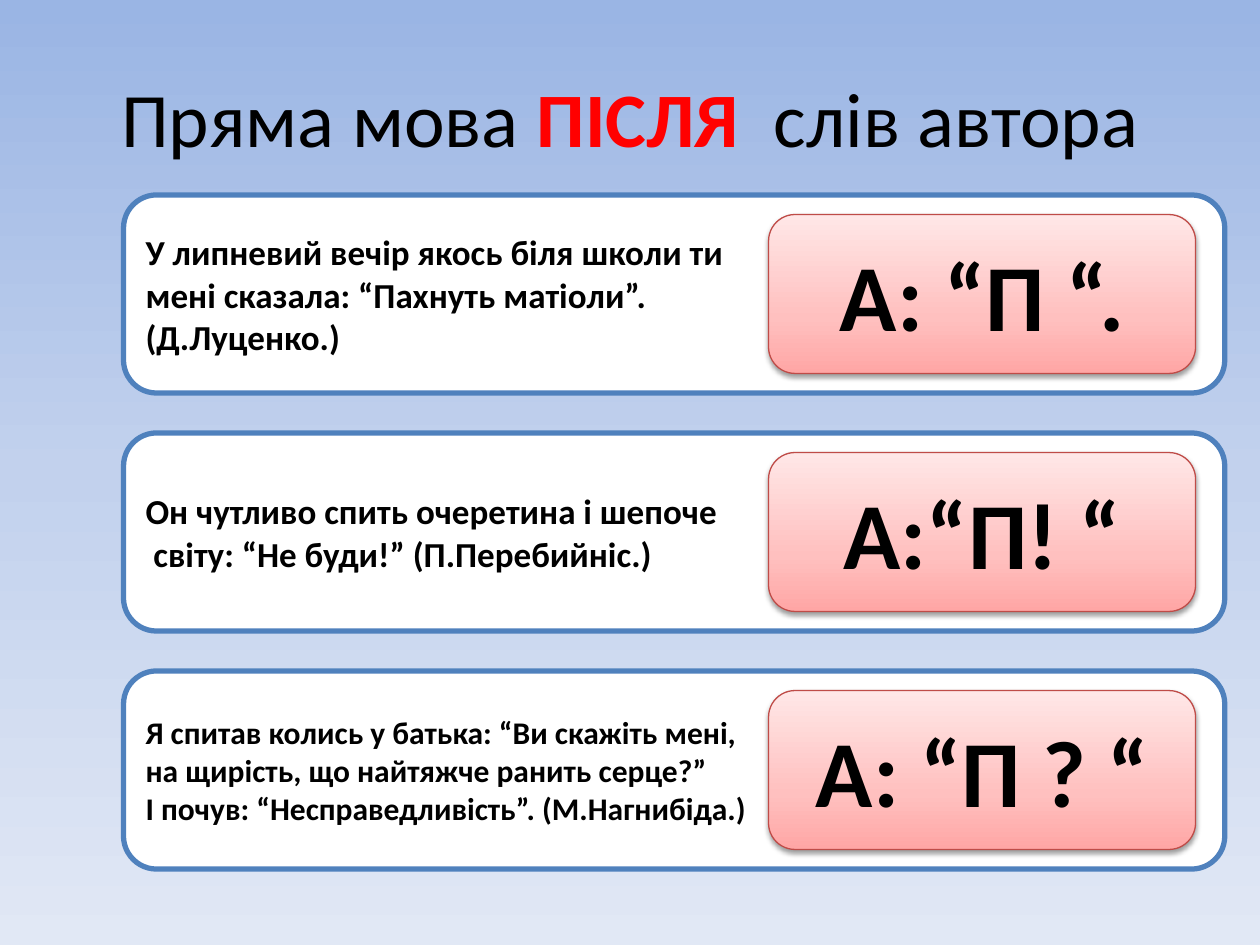
import pptx
import pptx.dml.color
import pptx.enum.shapes
import pptx.enum.text
import pptx.oxml
import pptx.oxml.ns
import pptx.util
from lxml import etree

Pt = pptx.util.Pt
RGB = pptx.dml.color.RGBColor
ALIGN = pptx.enum.text.PP_ALIGN
MIDDLE = pptx.enum.text.MSO_ANCHOR.MIDDLE
qn = pptx.oxml.ns.qn

BLACK = RGB(0x00, 0x00, 0x00)
WHITE = RGB(0xFF, 0xFF, 0xFF)
RED = RGB(0xFF, 0x00, 0x00)
CARD_BORDER = RGB(0x4F, 0x81, 0xBD)
SCHEME_BORDER = RGB(0xBF, 0x4C, 0x48)
SKY = [(0, RGB(0x9A, 0xB5, 0xE4)), (50, RGB(0xC2, 0xD1, 0xED)), (100, RGB(0xE1, 0xE8, 0xF5))]
ROSE = [(0, RGB(0xFF, 0xA6, 0xA5)), (35, RGB(0xFF, 0xC0, 0xBF)), (100, RGB(0xFF, 0xE7, 0xE7))]
FONT = "Calibri"

HEADING = [("Пряма мова ", BLACK, False), ("ПІСЛЯ", RED, True), ("  слів автора", BLACK, False)]

# example lines, example text size, punctuation scheme
EXAMPLES = [
    (["У липневий вечір якось біля школи ти",
      "мені сказала: “Пахнуть матіоли”.",
      "(Д.Луценко.)"], 20, "А: “П “."),
    (["Он чутливо спить очеретина і шепоче",
      " світу: “Не буди!” (П.Перебийніс.)"], 20, "А:“П! “"),
    (["Я спитав колись у батька: “Ви скажіть мені,",
      "на щирість, що найтяжче ранить серце?”",
      "І почув: “Несправедливість”. (М.Нагнибіда.)"], 18, "А: “П ? “"),
]

CARD_LEFT, CARD_TOP, CARD_WIDTH, CARD_HEIGHT = 70.6, 111.4, 629.3, 113.2
CARD_PITCH = 136
SCHEME_LEFT, SCHEME_WIDTH, SCHEME_HEIGHT = 439.2, 244, 90.8


def add_text(paragraph, text, size=20, color=BLACK, bold=True, align=ALIGN.LEFT):
    paragraph.alignment = align
    run = paragraph.add_run()
    run.text = text
    run.font.name = FONT
    run.font.size = Pt(size)
    run.font.bold = bold
    run.font.color.rgb = color


def fill_gradient(fill, owner, stops, angle):
    """Fill with any number of stops; angle runs counter-clockwise."""
    fill.gradient()
    fill.gradient_angle = angle
    stop_list = next(owner.iter(qn("a:gsLst")))
    for old_stop in list(stop_list):
        stop_list.remove(old_stop)
    for position, color in stops:
        stop = etree.SubElement(stop_list, qn("a:gs"), pos=str(position * 1000))
        etree.SubElement(stop, qn("a:srgbClr"), val=str(color))


def add_soft_shadow(shape):
    effects = next(shape.element.iter(qn("a:effectLst")))
    shadow = etree.SubElement(effects, qn("a:outerShdw"), blurRad=str(Pt(3.1)),
                              dist=str(Pt(1.6)), dir="5400000", rotWithShape="0")
    color = etree.SubElement(shadow, qn("a:srgbClr"), val=str(BLACK))
    etree.SubElement(color, qn("a:alpha"), val="38000")


def add_rounded(slide, left, top, width, height, border, border_width):
    shape = slide.shapes.add_shape(pptx.enum.shapes.MSO_SHAPE.ROUNDED_RECTANGLE,
                                   Pt(left), Pt(top), Pt(width), Pt(height))
    shape.fill.solid()
    shape.fill.fore_color.rgb = WHITE
    shape.line.color.rgb = border
    shape.line.width = Pt(border_width)
    shape.shadow.inherit = False
    shape.text_frame.word_wrap = True
    shape.text_frame.vertical_anchor = MIDDLE
    return shape


def add_example(slide, top, lines, size, scheme):
    card = add_rounded(slide, CARD_LEFT, top, CARD_WIDTH, CARD_HEIGHT, CARD_BORDER, 3)
    frame = card.text_frame
    for index, line in enumerate(lines):
        paragraph = frame.add_paragraph() if index else frame.paragraphs[0]
        add_text(paragraph, line, size=size)

    scheme_top = top + (CARD_HEIGHT - SCHEME_HEIGHT) / 2
    badge = add_rounded(slide, SCHEME_LEFT, scheme_top, SCHEME_WIDTH, SCHEME_HEIGHT,
                        SCHEME_BORDER, 0.75)
    fill_gradient(badge.fill, badge.element, ROSE, 90)
    add_soft_shadow(badge)
    add_text(badge.text_frame.paragraphs[0], scheme, size=54, align=ALIGN.CENTER)


def main():
    deck = pptx.Presentation()
    deck.slide_width, deck.slide_height = Pt(720), Pt(540)
    slide = deck.slides.add_slide(deck.slide_layouts[5])
    fill_gradient(slide.background.fill, slide.element, SKY, 270)

    title = slide.shapes.title
    title.left, title.top, title.width, title.height = Pt(36), Pt(21.6), Pt(648), Pt(90)
    title.text_frame.vertical_anchor = MIDDLE
    for text, color, bold in HEADING:
        add_text(title.text_frame.paragraphs[0], text, size=44, color=color,
                 bold=bold, align=ALIGN.CENTER)

    for row, (lines, size, scheme) in enumerate(EXAMPLES):
        add_example(slide, CARD_TOP + row * CARD_PITCH, lines, size, scheme)

    deck.save("out.pptx")


if __name__ == "__main__":
    main()
